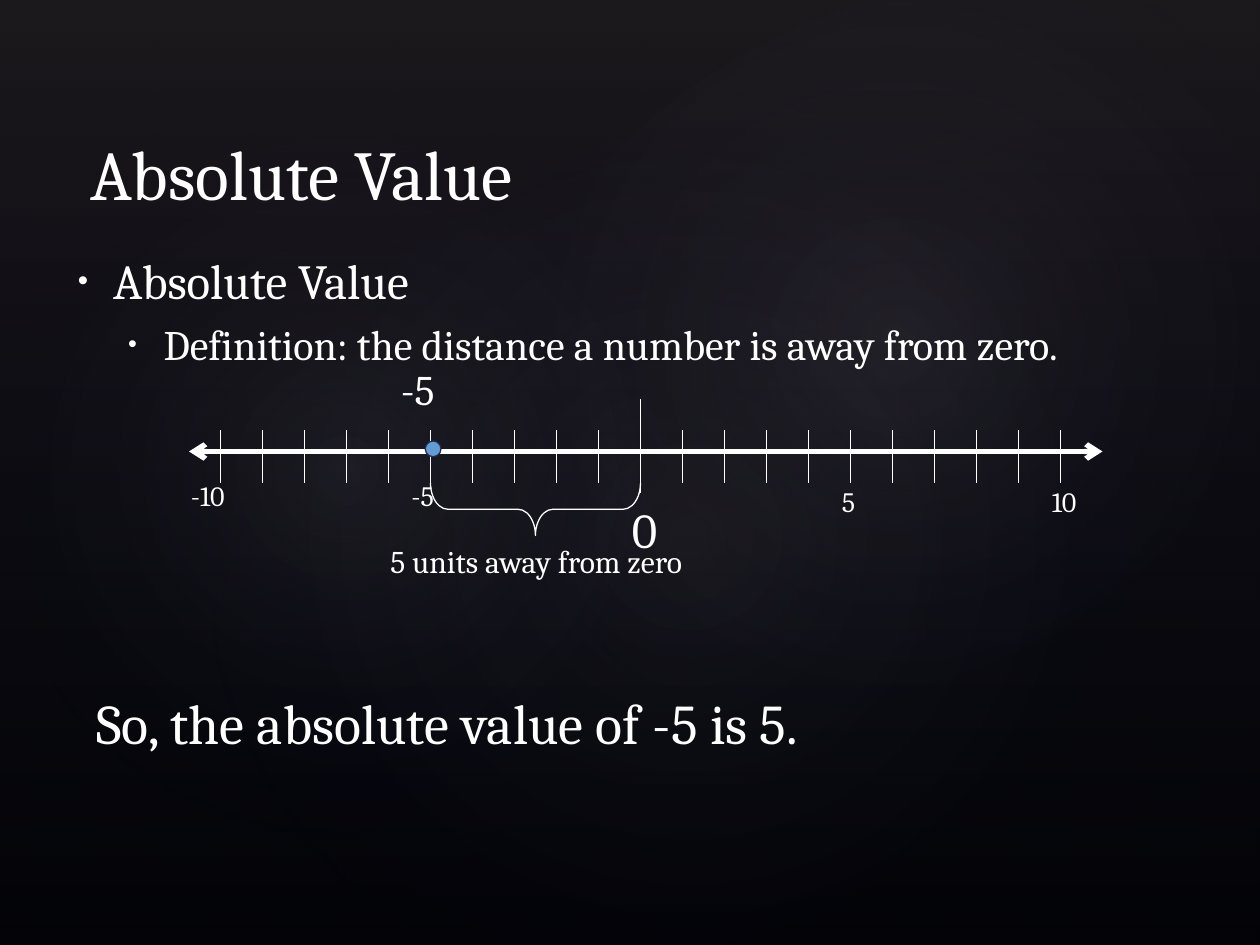
"""Build a slide that shows absolute value on a number line."""
from lxml.etree import SubElement as Sub
from pptx import Presentation
from pptx.dml.color import RGBColor as Rgb
from pptx.enum.shapes import MSO_CONNECTOR as Link, MSO_SHAPE as Kind
from pptx.enum.text import MSO_ANCHOR as Anchor
from pptx.oxml.ns import qn
from pptx.util import Pt

HUES = {"back": "000000", "ink": "FFFFFF", "dot": "629DD1", "navy": "242852",
        "plum": "504652", "glow": "C4BCC6"}
FONT = "Cambria"
WIDE, HIGH = 720, 540
ZERO, STEP, AXIS = 366, 24, 258

GLOWS = [
    ((108, 82, 570, 449), 328.7, 7),
    ((-21.6, 92, 436.3, 353), 294.3, 8),
    ((257.8, 9.4, 510.5, 374.4), 328.7, 8),
]
POINTS = [("Absolute Value", 28, 21.6), ("Definition: the distance a number is away from zero.", 24, 50.4)]
TITLE = ("Absolute Value", 40, (44.6, 54, 594, 72))
LABELS = [
    ("-10", 16, (102, 270, 48, 27)),
    ("-5", 16, (228, 270, 48, 27)),
    ("0", 28, (354, 282, 48, 41)),
    ("5", 16, (474, 273.6, 48, 27)),
    ("10", 16, (594, 273.6, 48, 27)),
    ("-5", 24, (222, 204, 48, 36)),
    ("5 units away from zero", 18, (216, 306, 210, 29)),
    ("So, the absolute value of -5 is 5.", 32, (48, 390, 648, 45)),
]


def tint(name):
    return Rgb.from_string(HUES[name])


def add(kind, box, turn=0):
    shape = slide.shapes.add_shape(kind, *map(Pt, box))
    shape.shadow.inherit = False
    shape.rotation = turn
    return shape


def edge(item, name, size):
    item.line.color.rgb = tint(name)
    item.line.width = Pt(size)


def fade(shape, stops, round_=False):
    shape.line.fill.background()
    props = shape.fill._xPr
    grad = props.makeelement(qn("a:gradFill"), {"rotWithShape": "1"})
    props.find(qn("a:prstGeom")).addnext(grad)
    group = Sub(grad, qn("a:gsLst"))
    for spot, name, alpha in stops:
        stop = Sub(group, qn("a:gs"), pos=str(spot * 1000))
        hue = Sub(stop, qn("a:srgbClr"), val=HUES[name])
        Sub(hue, qn("a:alpha"), val=str(alpha * 1000))
    if round_:
        mode = Sub(grad, qn("a:path"), {"path": "circle"})
        Sub(mode, qn("a:fillToRect"), dict.fromkeys("ltrb", "50000"))
    else:
        Sub(grad, qn("a:lin"), ang="5400000", scaled="0")


def frame(box, anchor=Anchor.TOP):
    text = slide.shapes.add_textbox(*map(Pt, box)).text_frame
    text.word_wrap = True
    text.vertical_anchor = anchor
    return text


def write(para, words, size):
    run = para.add_run()
    run.text = words
    run.font.name, run.font.size = FONT, Pt(size)
    run.font.color.rgb = tint("ink")


def rule(start, end, size=0.75):
    line = slide.shapes.add_connector(Link.STRAIGHT, *map(Pt, start + end))
    edge(line, "ink", size)
    Sub(line._element.spPr, qn("a:effectLst"))
    return line


deck = Presentation()
deck.slide_width, deck.slide_height = Pt(WIDE), Pt(HIGH)
slide = deck.slides.add_slide(deck.slide_layouts[6])
slide.background.fill.solid()
slide.background.fill.fore_color.rgb = tint("back")

fade(add(Kind.RECTANGLE, (0, 0, WIDE, HIGH)), [(0, "plum", 36), (100, "navy", 10)])
for box, turn, alpha in GLOWS:
    fade(add(Kind.OVAL, box, turn), [(0, "glow", alpha), (58, "navy", 0)], True)

body = frame((36, 126, 648, 102), Anchor.MIDDLE)
for i, (words, size, left) in enumerate(POINTS):
    para = body.add_paragraph() if i else body.paragraphs[0]
    para.level = i
    para.space_before = Pt(size * 0.2)
    props = para._p.get_or_add_pPr()
    props.set("marL", str(Pt(left)))
    props.set("indent", str(-Pt(20.2)))
    Sub(props, qn("a:buSzPct"), val="60000")
    Sub(props, qn("a:buFont"), typeface="Arial")
    Sub(props, qn("a:buChar"), char="•")
    write(para, words, size)

words, size, box = TITLE
write(frame(box, Anchor.BOTTOM).paragraphs[0], words, size)

axis = rule((108, AXIS), (630, AXIS), 3)
for end in ("headEnd", "tailEnd"):
    Sub(axis.line._get_or_add_ln(), qn("a:" + end), type="arrow")
for value in range(-10, 11):
    x = ZERO + value * STEP
    for top in ((AXIS - 12,) if value else (AXIS - 30, AXIS - 6)):
        rule((x, top), (x, top + 30))

dot = add(Kind.OVAL, (243, 252, 9, 9))
dot.fill.solid()
dot.fill.fore_color.rgb = tint("dot")
edge(dot, "navy", 0.75)

span, deep = 5 * STEP, 30
brace = add(Kind.LEFT_BRACE, (ZERO - (span + deep) / 2, 291 - span / 2, deep, span), 270)
brace.adjustments[0] = 0.333
brace.fill.background()
edge(brace, "ink", 0.75)

for words, size, box in LABELS:
    write(frame(box).paragraphs[0], words, size)

deck.save("out.pptx")
